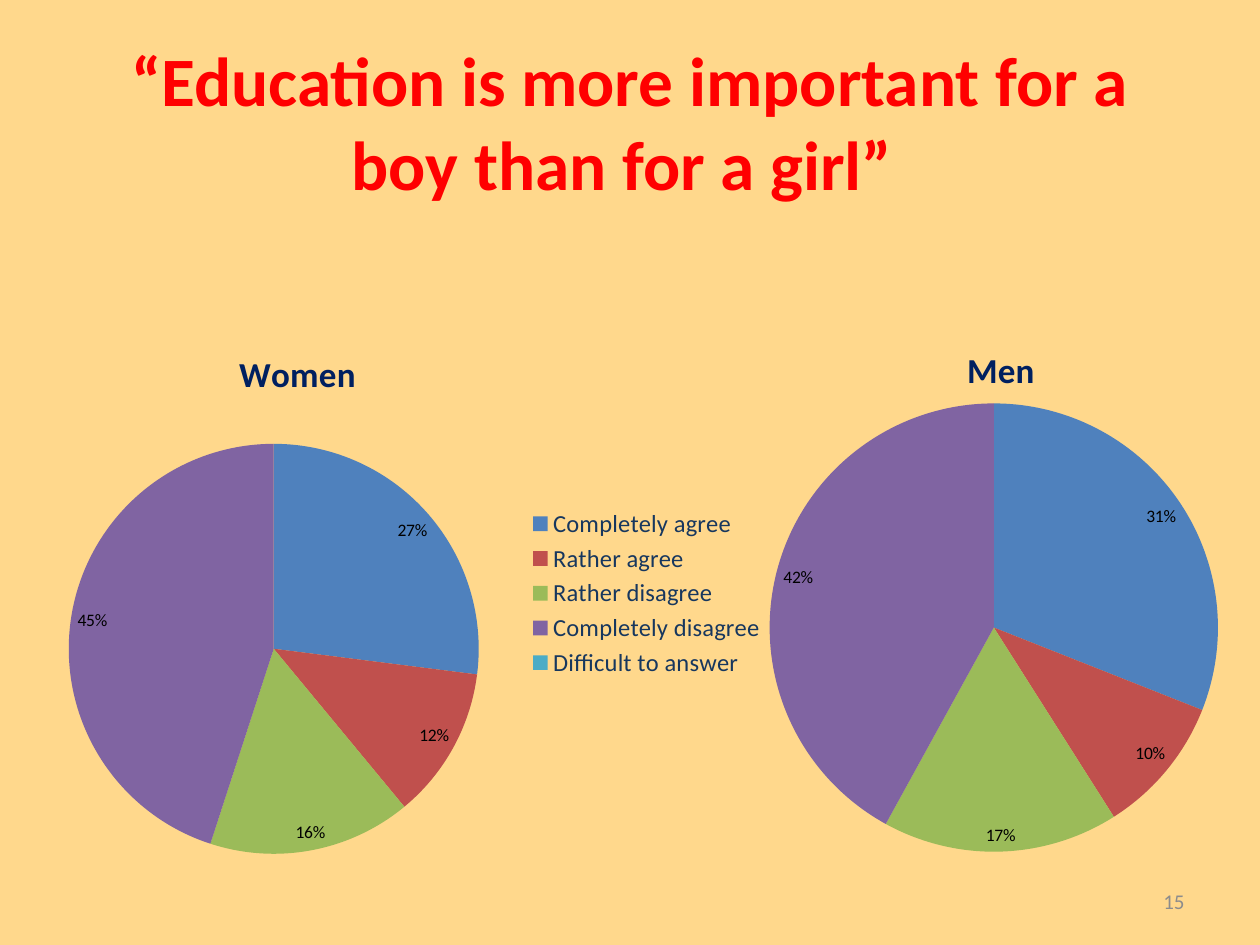
from dataclasses import dataclass

import pptx
import pptx.chart.data
import pptx.dml.color
import pptx.enum.chart
import pptx.enum.text
import pptx.oxml
import pptx.oxml.ns
import pptx.util

Pt = pptx.util.Pt
qn = pptx.oxml.ns.qn


@dataclass(frozen=True)
class Theme:
    font: str = "Calibri"
    background: str = "FFD88C"
    heading: str = "FF0000"
    chart_title: str = "002060"
    legend: str = "17375E"
    label: str = "000000"
    page_number: str = "8C8C8C"
    slices: tuple = ("4F81BD", "C0504D", "9BBB59", "8064A2", "4BACC6")
    heading_size: float = 39.6
    chart_title_size: float = 20
    legend_size: float = 14
    label_size: float = 10
    page_number_size: float = 12


def rgb(value):
    return pptx.dml.color.RGBColor.from_string(value)


def set_layout(element, index, x, y, w=None, h=None, inner=False):
    """Place a chart part by fractions of the chart area."""
    for old in element.findall(qn("c:layout")):
        element.remove(old)
    settings = [("layoutTarget", "inner")] if inner else []
    settings += [("xMode", "edge"), ("yMode", "edge")]
    sizes = [("x", x), ("y", y), ("w", w), ("h", h)]
    settings += [(name, value) for name, value in sizes if value is not None]
    body = "".join(f'<c:{name} val="{value}"/>' for name, value in settings)
    namespace = pptx.oxml.ns.nsdecls("c")
    element.insert(index, pptx.oxml.parse_xml(
        f"<c:layout {namespace}><c:manualLayout>{body}</c:manualLayout></c:layout>"))


class SlideBuilder:
    def __init__(self, deck, theme):
        self.theme = theme
        self.slide = deck.slides.add_slide(deck.slide_layouts[5])
        fill = self.slide.background.fill
        fill.solid()
        fill.fore_color.rgb = rgb(theme.background)

    def style(self, font, size, color, bold=False):
        font.name = self.theme.font
        font.size = Pt(size)
        font.bold = bold
        font.color.rgb = rgb(color)

    def set_text(self, box, text, size, color, align, bold=False):
        frame = box.text_frame
        frame.text = text
        frame.word_wrap = True
        frame.vertical_anchor = pptx.enum.text.MSO_ANCHOR.MIDDLE
        para = frame.paragraphs[0]
        para.alignment = align
        self.style(para.runs[0].font, size, color, bold)

    def title(self, text, left, top, width, height):
        box = self.slide.shapes.title
        box.left, box.top, box.width, box.height = map(Pt, (left, top, width, height))
        self.set_text(box, text, self.theme.heading_size, self.theme.heading,
                      pptx.enum.text.PP_ALIGN.CENTER, bold=True)

    def page_number(self, text, left, top, width, height):
        box = self.slide.shapes.add_textbox(*map(Pt, (left, top, width, height)))
        self.set_text(box, text, self.theme.page_number_size, self.theme.page_number,
                      pptx.enum.text.PP_ALIGN.RIGHT)

    def pie(self, name, categories, values, frame, title_at, plot_at,
            legend_at=None, hidden_label=None):
        """Add a pie; the *_at places are fractions of the chart area."""
        theme = self.theme
        data = pptx.chart.data.CategoryChartData(number_format="0%")
        data.categories = categories
        data.add_series(name, values)
        chart = self.slide.shapes.add_chart(
            pptx.enum.chart.XL_CHART_TYPE.PIE, *map(Pt, frame), data).chart
        self.style(chart.font, theme.label_size, theme.label)

        chart.has_title = True
        title_frame = chart.chart_title.text_frame
        title_frame.text = name
        self.style(title_frame.paragraphs[0].runs[0].font,
                   theme.chart_title_size, theme.chart_title, bold=True)
        title_element = chart._chartSpace.chart.find(qn("c:title"))
        set_layout(title_element, 1, *title_at)
        set_layout(chart._chartSpace.chart.plotArea, 0, *plot_at, inner=True)

        series = chart.plots[0].series[0]
        for index, color in enumerate(theme.slices):
            fill = series.points[index].format.fill
            fill.solid()
            fill.fore_color.rgb = rgb(color)

        labels = series.data_labels
        labels.show_value = True
        labels.number_format = "0%"
        labels.number_format_is_linked = False
        labels.position = pptx.enum.chart.XL_LABEL_POSITION.BEST_FIT
        self.style(labels.font, theme.label_size, theme.label)
        if hidden_label is not None:
            labels._element.insert(0, pptx.oxml.parse_xml(
                f'<c:dLbl {pptx.oxml.ns.nsdecls("c")}><c:idx val="{hidden_label}"/>'
                '<c:delete val="1"/></c:dLbl>'))

        chart.has_legend = legend_at is not None
        if legend_at:
            legend = chart.legend
            legend.position = pptx.enum.chart.XL_LEGEND_POSITION.RIGHT
            legend.include_in_layout = False
            self.style(legend.font, theme.legend_size, theme.legend)
            set_layout(legend._element, 1, *legend_at)


def main():
    deck = pptx.Presentation()
    deck.slide_width, deck.slide_height = Pt(720), Pt(540)
    page = SlideBuilder(deck, Theme())
    page.title("“Education is more important for a boy than for a girl” ",
               36, 24, 648, 90)
    answers = ["Completely agree", "Rather agree", "Rather disagree",
               "Completely disagree", "Difficult to answer"]
    page.pie("Women", answers, [0.27, 0.12, 0.16, 0.45, 0],
             frame=(18, 180, 426, 318), title_at=(0.27, 0.05),
             plot_at=(0.05, 0.23, 0.55, 0.74), legend_at=(0.66, 0.34, 0.33, 0.32))
    page.pie("Men", ["1", "2", "3", "4", "5"], [0.31, 0.1, 0.17, 0.42, 0],
             frame=(360, 174, 420, 324), title_at=(0.45, 0.06),
             plot_at=(0.19, 0.17, 0.61, 0.8), hidden_label=4)
    page.page_number("15", 516, 500.5, 168, 28.75)
    deck.save("out.pptx")


if __name__ == "__main__":
    main()
